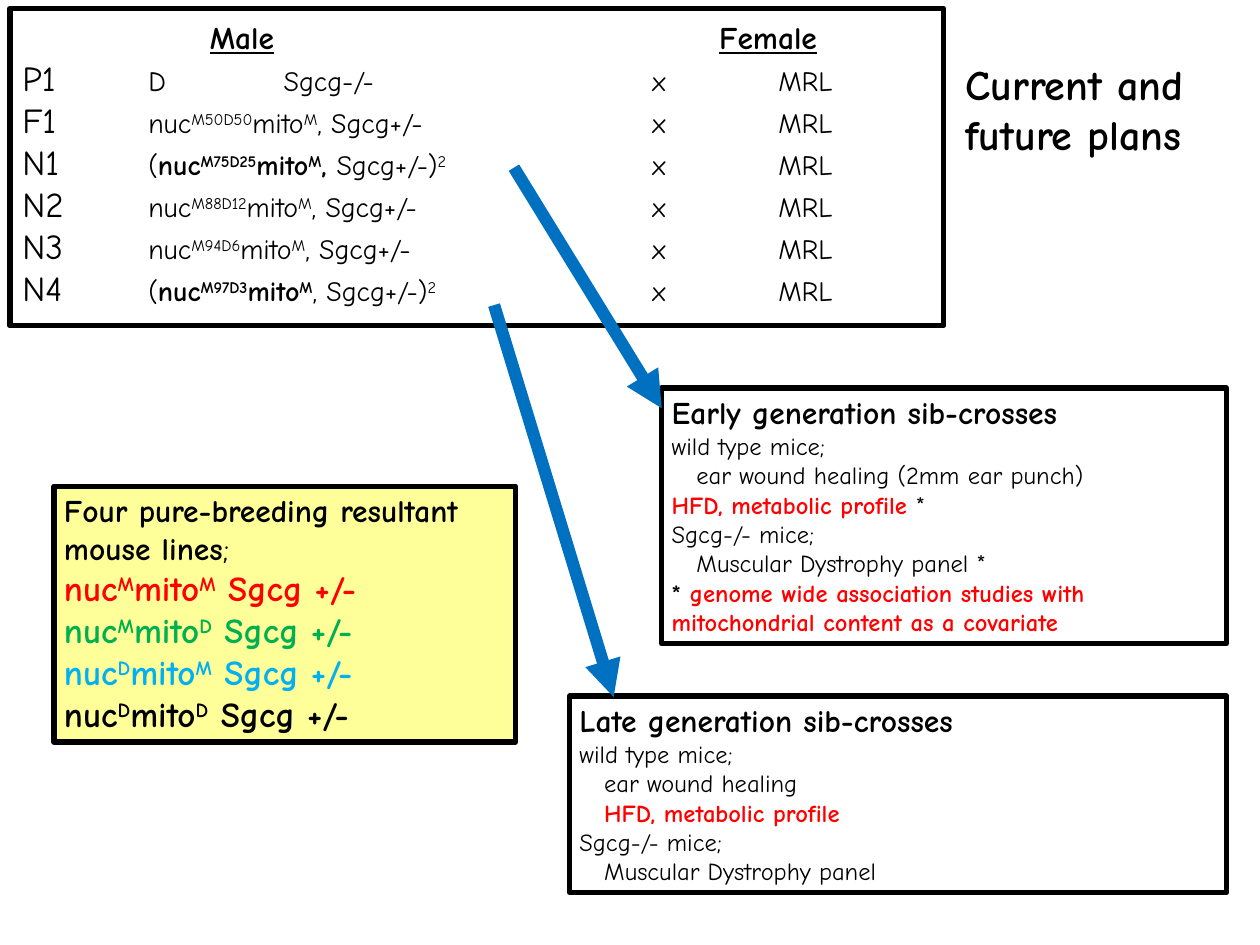
"""Build a slide on mouse breeding crosses and the sib-cross plans drawn from them."""
from dataclasses import dataclass, replace
from typing import NamedTuple

from lxml.etree import SubElement
from pptx import Presentation
from pptx.dml.color import RGBColor
from pptx.enum.shapes import MSO_CONNECTOR as Connector, MSO_SHAPE as Preset
from pptx.enum.text import MSO_ANCHOR as Anchor, MSO_AUTO_SIZE as AutoSize, PP_ALIGN as Align
from pptx.oxml.ns import qn
from pptx.util import Cm, Pt

FONT = "Comic Neue"
BLACK, RED, GREEN, SKY, BLUE = "000000", "FF0000", "00B050", "00B0F0", "0070C0"
YELLOW = "FFFF99"


@dataclass(frozen=True)
class Span:
    text: str
    size: float = 14
    bold: bool = False
    color: str = BLACK
    underline: bool = False
    raised: bool = False


@dataclass(frozen=True)
class Line:
    spans: tuple[Span, ...]
    indent: float = 0
    tabs: tuple[float, ...] = ()


class Frame(NamedTuple):
    left: float
    top: float
    width: float
    height: float


@dataclass(frozen=True)
class Panel:
    frame: Frame
    lines: list[Line]
    fill: str | None = None
    border: bool = True
    inset: tuple[float, float] = (0.2, 0.1)


class Arrow(NamedTuple):
    start_x: float
    start_y: float
    end_x: float
    end_y: float


class Cross(NamedTuple):
    label: str
    nuclear: str
    intercrossed: bool = False
    bold_comma: bool = False


def rgb(value: str) -> RGBColor:
    """Turn a hex string into a colour."""
    return RGBColor.from_string(value)


def apply(target, **values) -> None:
    """Set each named attribute on the target."""
    for name, value in values.items():
        setattr(target, name, value)


def plain(text: str, indent: float = 0, **style) -> Line:
    """Make a line of one span."""
    return Line((Span(text, **style),), indent)


def mouse_line(nuclear: str, mito: str, color: str) -> Line:
    """Make the name of one pure-breeding line."""
    base = Span("nuc", 20, True, color)
    high = replace(base, raised=True)
    return Line((base, replace(high, text=nuclear), replace(base, text="mito"),
                 replace(high, text=mito), replace(base, text=" Sgcg +/-")))


def cross_line(cross: Cross) -> Line:
    """Make the row of one generation in the breeding scheme."""
    body = Span("\t", 16)
    name = replace(body, text="nuc", bold=cross.intercrossed)
    high = replace(name, raised=True)
    opening, closing = ("\t(", "Sgcg+/-)") if cross.intercrossed else ("\t", "Sgcg+/-")
    square = (replace(body, text="2", raised=True),) if cross.intercrossed else ()
    return Line((Span(cross.label, 20), replace(body, text=opening), name,
                 replace(high, text=cross.nuclear), replace(name, text="mito"),
                 replace(high, text="M"), replace(body, text=", ", bold=cross.bold_comma),
                 replace(body, text=closing), *square, replace(body, text="\tx\tMRL")),
                tabs=COLUMNS)


def write_line(para, line: Line) -> None:
    """Write one line of styled spans into a paragraph."""
    apply(para, alignment=Align.LEFT, space_before=Pt(0), space_after=Pt(0))
    props = para._p.get_or_add_pPr()
    if line.tabs:
        stops = SubElement(props, qn("a:tabLst"))
        for position in line.tabs:
            SubElement(stops, qn("a:tab"), pos=str(Cm(position)), algn="l")
    else:
        props.set("marL", str(Cm(line.indent)))
        props.set("indent", "0")
        SubElement(props, qn("a:buNone"))
    for span in line.spans:
        run = para.add_run()
        run.text = span.text
        apply(run.font, name=FONT, size=Pt(span.size), bold=span.bold, underline=span.underline)
        run.font.color.rgb = rgb(span.color)
        if span.raised:
            run._r.get_or_add_rPr().set("baseline", "30000")


def fill_panel(box, panel: Panel) -> None:
    """Place a box and give it the panel's look and text."""
    apply(box, **{name: Cm(value) for name, value in panel.frame._asdict().items()})
    if panel.fill:
        box.fill.solid()
        box.fill.fore_color.rgb = rgb(panel.fill)
    else:
        box.fill.background()
    if panel.border:
        box.line.color.rgb = rgb(BLACK)
        box.line.width = Pt(3)
    side, edge = map(Cm, panel.inset)
    frame = box.text_frame
    apply(frame, word_wrap=True, auto_size=AutoSize.NONE, vertical_anchor=Anchor.TOP,
          margin_left=side, margin_right=side, margin_top=edge, margin_bottom=edge)
    for index, line in enumerate(panel.lines):
        write_line(frame.add_paragraph() if index else frame.paragraphs[0], line)


def draw_arrow(page, arrow: Arrow) -> None:
    """Draw a thick blue arrow."""
    link = page.shapes.add_connector(Connector.STRAIGHT, *map(Cm, arrow))
    link.line.color.rgb = rgb(BLUE)
    link.line.width = Pt(7)
    SubElement(link.line._get_or_add_ln(), qn("a:tailEnd"), type="triangle")
    SubElement(link._element.spPr, qn("a:effectLst"))


COLUMNS = (2.54, 12.7, 15.24)
STEP = 0.5
CROSSES = [Cross("F1", "M50D50"), Cross("N1", "M75D25", True, True), Cross("N2", "M88D12"),
           Cross("N3", "M94D6"), Cross("N4", "M97D3", True)]
HEADER = Line((Span("\t", 20, True), Span("Male", 18, True, underline=True),
               Span("\t", 18, True), Span("Female", 18, True, underline=True)),
              tabs=(3.78, 14.05))
PARENTS = Line((Span("P1", 20), Span("\tD\tSgcg-/-\tx\tMRL", 16)),
               tabs=(COLUMNS[0], 5.27, *COLUMNS[1:]))
WILD_TYPE, KNOCKOUT = plain("wild type mice;"), plain("Sgcg-/- mice;")
PROFILE = Span("HFD, metabolic profile", bold=True, color=RED)

TITLE = Panel(Frame(19.21, 1.05, 5.54, 2.31),
              [plain(text, size=24, bold=True) for text in ("Current and", "future plans")],
              border=False, inset=(0.25, 0.13))
SCHEME = Panel(Frame(0.2, 0.17, 18.82, 6.4),
               [HEADER, PARENTS, *map(cross_line, CROSSES)], inset=(0.25, 0.12))
MOUSE_LINES = Panel(Frame(1.09, 9.8, 9.3, 5.16), [
    Line((Span("Four pure-breeding resultant mouse lines", 18, True), Span(";", 18))),
    mouse_line("M", "M", RED), mouse_line("M", "D", GREEN),
    mouse_line("D", "M", SKY), mouse_line("D", "D", BLACK)], YELLOW)
EARLY = Panel(Frame(13.34, 7.82, 11.38, 5.16), [
    plain("Early generation sib-crosses", size=18, bold=True),
    WILD_TYPE, plain("ear wound healing (2mm ear punch)", STEP),
    Line((PROFILE, Span(" *"))),
    KNOCKOUT, plain("Muscular Dystrophy panel *", STEP),
    Line((Span("* ", bold=True),
          Span("genome wide association studies with mitochondrial content as a covariate",
               bold=True, color=RED)))])
LATE = Panel(Frame(11.48, 14.03, 13.25, 3.96), [
    plain("Late generation sib-crosses", size=18, bold=True),
    WILD_TYPE, plain("ear wound healing", STEP), Line((PROFILE,), STEP),
    KNOCKOUT, plain("Muscular Dystrophy panel", STEP)])
ARROWS = [Arrow(10.36, 3.38, 13.34, 8.23), Arrow(9.96, 6.15, 12.37, 14.05)]


def main() -> None:
    """Build and save the deck."""
    deck = Presentation()
    apply(deck, slide_width=Cm(25.4), slide_height=Cm(19.05))
    page = deck.slides.add_slide(deck.slide_layouts.get_by_name("Comparison"))
    *boxes, spare = page.placeholders
    page.shapes._spTree.remove(spare._element)
    for box, panel in zip(boxes, (TITLE, MOUSE_LINES, EARLY, LATE)):
        fill_panel(box, panel)
    scheme = page.shapes.add_shape(Preset.RECTANGLE, *map(Cm, SCHEME.frame))
    scheme.shadow.inherit = False
    fill_panel(scheme, SCHEME)
    for arrow in ARROWS:
        draw_arrow(page, arrow)
    deck.save("out.pptx")


if __name__ == "__main__":
    main()
